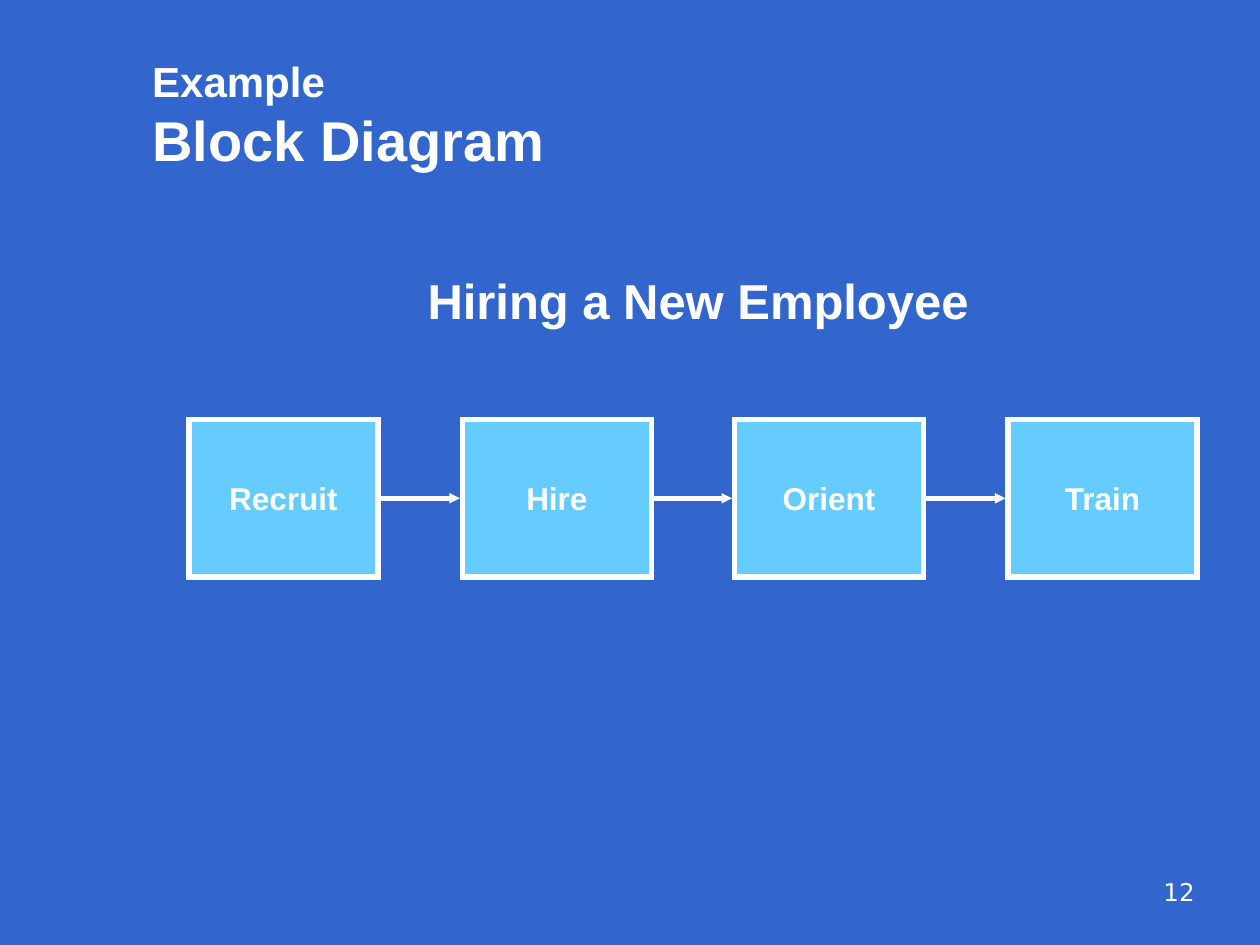
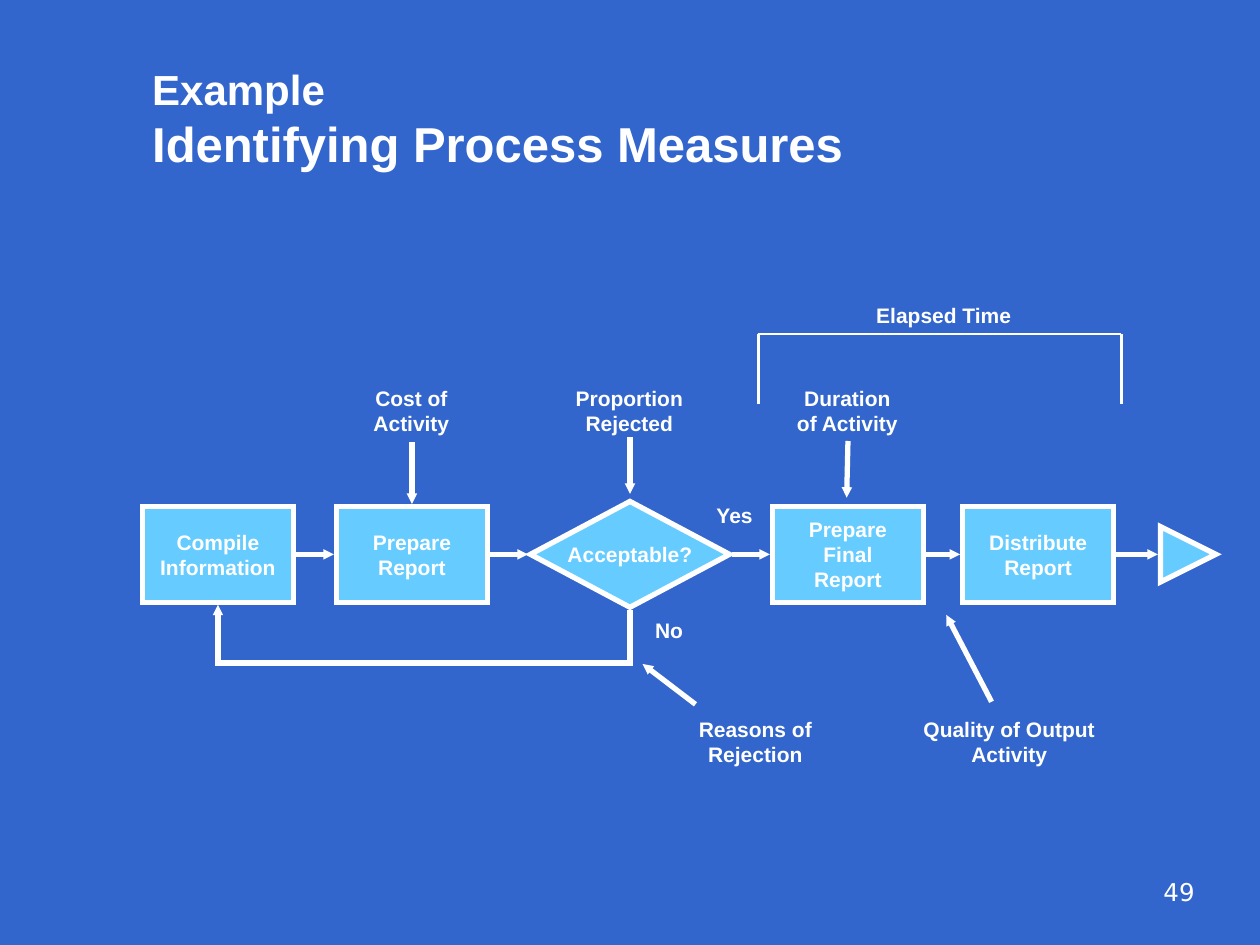
from dataclasses import dataclass

from lxml.etree import SubElement
from pptx import Presentation
from pptx.dml.color import RGBColor
from pptx.enum.shapes import MSO_CONNECTOR, MSO_SHAPE
from pptx.enum.text import MSO_ANCHOR, PP_ALIGN
from pptx.oxml.ns import qn
from pptx.util import Pt

EMU_PER_PX = 9144  # 100 px to the inch


@dataclass(frozen=True)
class Theme:
    background: RGBColor = RGBColor(0x33, 0x66, 0xCC)
    node: RGBColor = RGBColor(0x66, 0xCC, 0xFF)
    ink: RGBColor = RGBColor(0xFF, 0xFF, 0xFF)
    font: str = "Arial"
    number_font: str = "DejaVu Sans"
    kicker: int = 24
    title: int = 32
    subtitle: int = 28
    step: int = 18
    label: int = 12
    number: int = 14
    heavy: float = 3
    thin: float = 1.5


@dataclass(frozen=True)
class Box:
    left: float
    top: float
    width: float
    height: float

    @property
    def right(self):
        return self.left + self.width

    @property
    def middle(self):
        return self.top + self.height / 2

    def inner(self, left, top, width, height):
        return Box(self.left + left, self.top + top, width, height)

    def point(self, x, y):
        return self.left + x, self.top + y

    def emu(self):
        return [px(n) for n in (self.left, self.top, self.width, self.height)]


THEME = Theme()
TITLE_BOX = Box(111, 17, 850, 125)
NUMBER_BOX = Box(750, 691, 208, 50)
ARROW_GAP = 2


def px(length):
    return round(length * EMU_PER_PX)


# Shared text and line styles

def style_font(font, size, name=THEME.font, bold=True):
    for key, value in {"name": name, "size": Pt(size), "bold": bold}.items():
        setattr(font, key, value)
    font.color.rgb = THEME.ink


def format_frame(frame, inset_x=10, inset_y=5, wrap=True, anchor=MSO_ANCHOR.TOP):
    formats = {
        "word_wrap": wrap,
        "vertical_anchor": anchor,
        "margin_left": px(inset_x),
        "margin_right": px(inset_x),
        "margin_top": px(inset_y),
        "margin_bottom": px(inset_y),
    }
    for key, value in formats.items():
        setattr(frame, key, value)


def write_lines(frame, text, align, **font_format):
    for index, line in enumerate(text.split("\n")):
        para = frame.paragraphs[0] if index == 0 else frame.add_paragraph()
        para.alignment = align
        span = para.add_run()
        span.text = line
        style_font(span.font, **font_format)


def add_label(page, box, text, size=THEME.label):
    frame = page.shapes.add_textbox(*box.emu()).text_frame
    format_frame(frame, inset_x=5)
    write_lines(frame, text, PP_ALIGN.CENTER, size=size)


def style_outline(shape, width=THEME.heavy, arrow=False):
    shape.line.color.rgb = THEME.ink
    shape.line.width = Pt(width)
    outline = shape._element.spPr.find(qn("a:ln"))
    SubElement(outline, qn("a:miter"), lim="800000")
    if arrow:
        SubElement(outline, qn("a:tailEnd"), type="triangle", w="sm", len="sm")


# Diagram parts

def add_node(page, box, text="", size=THEME.label, kind=MSO_SHAPE.RECTANGLE):
    node = page.shapes.add_shape(kind, *box.emu())
    node.shadow.inherit = False
    node.fill.solid()
    node.fill.fore_color.rgb = THEME.node
    style_outline(node)
    if text:
        is_rectangle = kind == MSO_SHAPE.RECTANGLE
        format_frame(node.text_frame, inset_x=13 if is_rectangle else 0,
                     inset_y=0, wrap=is_rectangle, anchor=MSO_ANCHOR.MIDDLE)
        write_lines(node.text_frame, text, PP_ALIGN.CENTER, size=size)
    return node


def add_line(page, start, end, width=THEME.heavy, arrow=True,
             kind=MSO_CONNECTOR.STRAIGHT):
    line = page.shapes.add_connector(kind, *(px(n) for n in (*start, *end)))
    style_outline(line, width, arrow)
    SubElement(line._element.spPr, qn("a:effectLst"))
    return line


def link_nodes(page, boxes):
    for before, after in zip(boxes, boxes[1:]):
        add_line(page, (before.right + ARROW_GAP, before.middle),
                 (after.left - ARROW_GAP, before.middle))


def add_return_loop(page, start, end, bottom):
    """Run down from start, left along bottom and up to end."""
    rise, reach = start[1] - end[1], start[0] - end[0]
    center_x, center_y = (start[0] + end[0]) / 2, (start[1] + end[1]) / 2
    # An elbow runs sideways, so it is laid out upright and turned by 270 degrees
    loop = add_line(page, (center_x - rise / 2, center_y + reach / 2),
                    (center_x + rise / 2, center_y - reach / 2),
                    kind=MSO_CONNECTOR.ELBOW)
    properties = loop._element.spPr
    properties.find(qn("a:xfrm")).set("rot", str(270 * 60000))
    bend = round((start[1] - bottom) / rise * 100000)
    adjustments = properties.find(qn("a:prstGeom")).find(qn("a:avLst"))
    SubElement(adjustments, qn("a:gd"), name="adj1", fmla=f"val {bend}")


# Page frame: background, title and number

def add_title(page, box, kicker, title, size):
    frame = page.shapes.add_textbox(*box.emu()).text_frame
    format_frame(frame, anchor=MSO_ANCHOR.BOTTOM)
    write_lines(frame, kicker, PP_ALIGN.LEFT, size=THEME.kicker)
    para = frame.paragraphs[0]
    para.add_line_break()
    span = para.add_run()
    span.text = title
    style_font(span.font, size)


def add_number(page, box, number):
    frame = page.shapes.add_textbox(*box.emu()).text_frame
    format_frame(frame)
    write_lines(frame, str(number), PP_ALIGN.RIGHT, size=THEME.number,
                name=THEME.number_font, bold=False)


def add_page(deck, title, size, number):
    page = deck.slides.add_slide(deck.slide_layouts[6])
    page.background.fill.solid()
    page.background.fill.fore_color.rgb = THEME.background
    add_number(page, NUMBER_BOX, number)
    add_title(page, TITLE_BOX, "Example", title, size)
    return page


# Block diagram: equal steps spread across the box

def draw_block_diagram(page, box, steps, step_width=150):
    pitch = (box.width - step_width) / (len(steps) - 1)
    boxes = [box.inner(round(index * pitch), 0, step_width, box.height)
             for index in range(len(steps))]
    for step_box, step in zip(boxes, steps):
        add_node(page, step_box, step, THEME.step)
    link_nodes(page, boxes)


# Process with its measures

def draw_process(page, box):
    steps = {0: "Compile Information", 154: "Prepare\nReport",
             500: "Prepare\nFinal Report", 651: "Distribute\nReport"}
    step_boxes = [box.inner(left, 167, 120, 76) for left in steps]
    for step_box, text in zip(step_boxes, steps.values()):
        add_node(page, step_box, text)

    decision = box.inner(308, 163, 158, 84)
    add_node(page, decision, "Acceptable?", kind=MSO_SHAPE.DIAMOND)
    finish = box.inner(808, 183, 44, 44)
    add_node(page, finish, kind=MSO_SHAPE.FLOWCHART_EXTRACT).rotation = 90

    link_nodes(page, [*step_boxes[:2], decision, *step_boxes[2:], finish])
    add_return_loop(page, box.point(387, 249), box.point(60, 245), box.top + 291)
    add_label(page, box.inner(443, 159, 54, 30), "Yes")
    add_label(page, box.inner(391, 250, 54, 30), "No")


def draw_measures(page, box):
    measures = [  # text, left, top, width, arrow start, arrow end
        ("Cost of\nActivity", 156, 66, 115, (214, 116), (214, 165)),
        ("Proportion\nRejected", 322, 66, 129, (387, 112), (387, 157)),
        ("Duration\nof Activity", 502, 66, 115, (560, 115), (559, 160)),
        ("Reasons of Rejection", 429, 329, 115, (439, 324), (397, 292)),
        ("Quality of Output Activity", 610, 329, 156, (674, 322), (638, 253)),
    ]
    for text, left, top, width, start, end in measures:
        add_label(page, box.inner(left, top, width, 50), text)
        add_line(page, box.point(*start), box.point(*end))


def draw_elapsed_time(page, box):
    add_label(page, box.inner(13, 0, 268, 30), "Elapsed Time")
    corners = [box.point(x, y) for x, y in
               ((0, box.height), (0, 30), (box.width, 30), (box.width, box.height))]
    for start, end in zip(corners, corners[1:]):
        add_line(page, start, end, THEME.thin, arrow=False)


def main():
    deck = Presentation()
    deck.slide_width, deck.slide_height = px(1000), px(750)

    page = add_page(deck, "Block Diagram", THEME.title, 12)
    add_label(page, Box(108, 210, 892, 57), "Hiring a New Employee", THEME.subtitle)
    draw_block_diagram(page, Box(150, 333, 800, 125),
                       ["Recruit", "Hire", "Orient", "Train"])

    page = add_page(deck, "Identifying Process Measures", THEME.subtitle, 49)
    process_box = Box(113, 235, 852, 379)
    draw_process(page, process_box)
    draw_measures(page, process_box)
    draw_elapsed_time(page, process_box.inner(489, 0, 288, 86))

    deck.save("out.pptx")


if __name__ == "__main__":
    main()
